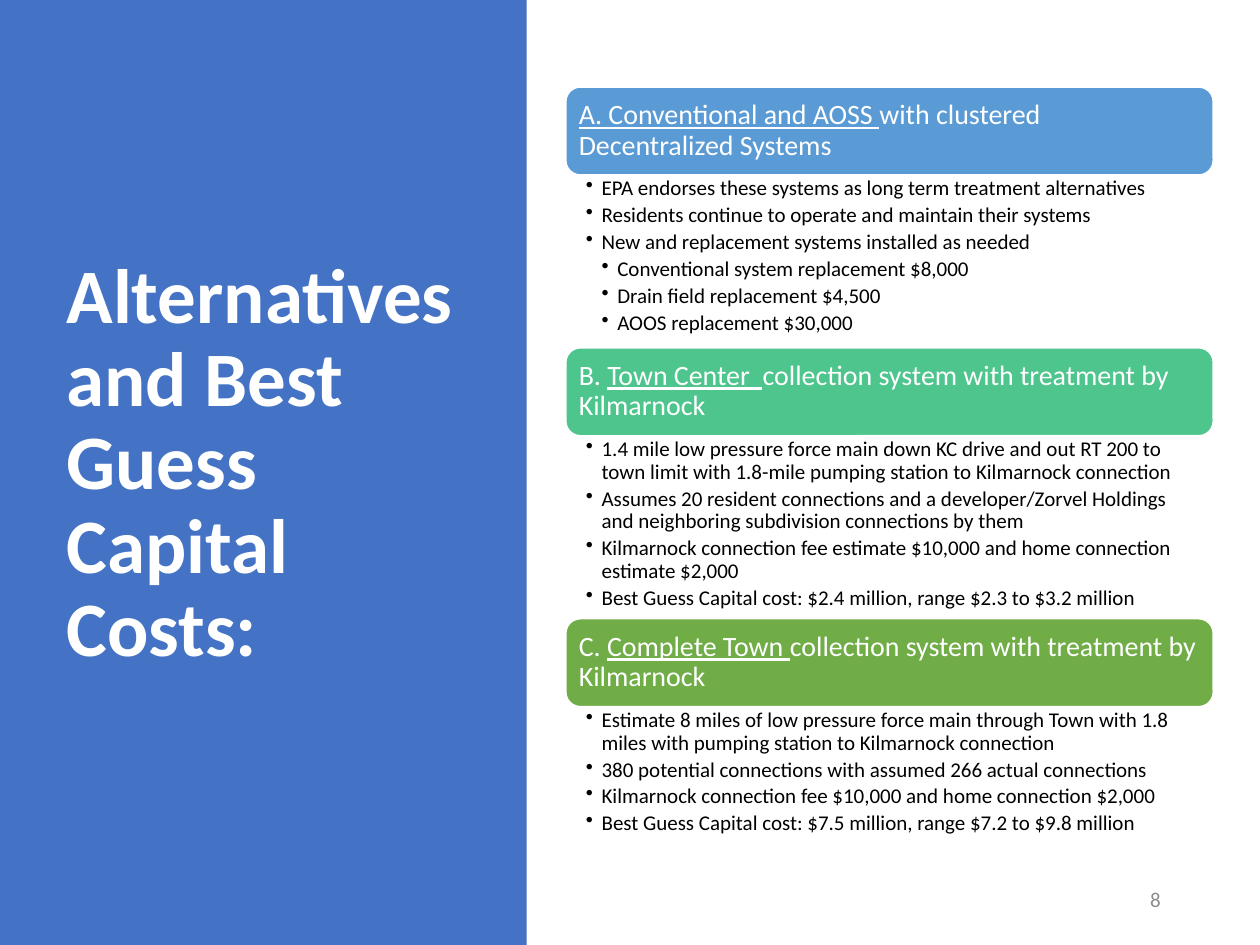
from dataclasses import dataclass

from lxml import etree
from pptx import Presentation
from pptx.dml.color import RGBColor
from pptx.enum.shapes import MSO_SHAPE
from pptx.enum.text import MSO_ANCHOR, PP_ALIGN
from pptx.oxml.ns import qn
from pptx.util import Inches, Pt

RECTANGLE = MSO_SHAPE.RECTANGLE
ROUNDED = MSO_SHAPE.ROUNDED_RECTANGLE
TOP, MIDDLE = MSO_ANCHOR.TOP, MSO_ANCHOR.MIDDLE
LEFT, RIGHT = PP_ALIGN.LEFT, PP_ALIGN.RIGHT


@dataclass(frozen=True)
class Theme:
    font: str = "Calibri"
    panel: str = "4472C4"
    white: str = "FFFFFF"
    black: str = "000000"
    gray: str = "8C8C8C"
    title_size: int = 44
    heading_size: int = 16
    body_size: int = 12
    line_spacing: float = 0.9


THEME = Theme()

# Each heading is a list of (text, underlined); each bullet is (level, text)
ALTERNATIVES = [
    {
        "color": "5B9BD5",
        "body_height": 1.37,
        "heading": [("A. Conventional and AOSS ", True),
                    ("with clustered Decentralized Systems", False)],
        "bullets": [
            (1, "EPA endorses these systems as long term treatment alternatives"),
            (1, "Residents continue to operate and maintain their systems"),
            (1, "New and replacement systems installed as needed"),
            (2, "Conventional system replacement $8,000"),
            (2, "Drain field replacement $4,500"),
            (2, "AOOS replacement $30,000"),
        ],
    },
    {
        "color": "4DC58D",
        "body_height": 1.45,
        "heading": [("B. ", False), ("Town Center  ", True),
                    ("collection system with treatment by Kilmarnock", False)],
        "bullets": [
            (1, "1.4 mile low pressure force main down KC drive and out RT 200 to "
                "town limit with 1.8-mile pumping station to Kilmarnock connection"),
            (1, "Assumes 20 resident connections and a developer/Zorvel Holdings and "
                "neighboring subdivision connections by them"),
            (1, "Kilmarnock connection fee estimate $10,000 and home connection "
                "estimate $2,000"),
            (1, "Best Guess Capital cost: $2.4 million, range $2.3 to $3.2 million"),
        ],
    },
    {
        "color": "70AD47",
        "body_height": 1.09,
        "heading": [("C. ", False), ("Complete Town ", True),
                    ("collection system with treatment by Kilmarnock", False)],
        "bullets": [
            (1, "Estimate 8 miles of low pressure force main through Town with 1.8 "
                "miles with pumping station to Kilmarnock connection"),
            (1, "380 potential connections with assumed 266 actual connections"),
            (1, "Kilmarnock connection fee $10,000 and home connection $2,000"),
            (1, "Best Guess Capital cost: $7.5 million, range $7.2 to $9.8 million"),
        ],
    },
]


def add_block(slide, kind, box, color):
    shape = slide.shapes.add_shape(kind, *map(Inches, box))
    shape.shadow.inherit = False
    shape.fill.solid()
    shape.fill.fore_color.rgb = RGBColor.from_string(color)
    shape.line.fill.background()
    return shape


def set_frame(shape, anchor, insets=(0.1, 0.05, 0.1, 0.05)):
    frame = shape.text_frame
    frame.word_wrap = True
    frame.vertical_anchor = anchor
    (frame.margin_left, frame.margin_top,
     frame.margin_right, frame.margin_bottom) = map(Inches, insets)
    return frame


def style_paragraph(paragraph, size, color, bold=False, align=LEFT):
    paragraph.alignment = align
    paragraph.line_spacing = THEME.line_spacing
    paragraph.font.name = THEME.font
    paragraph.font.size = Pt(size)
    paragraph.font.bold = bold
    paragraph.font.color.rgb = RGBColor.from_string(color)


def set_bullet(paragraph, level):
    paragraph.level = level
    properties = paragraph._p.get_or_add_pPr()
    properties.set("marL", str(Inches(0.125 * level)))
    properties.set("indent", str(Inches(-0.125)))
    bullet = etree.Element(qn("a:buChar"), char="•")
    properties.find(qn("a:defRPr")).addprevious(bullet)


def add_text(slide, box, text, size, color, **style):
    frame = set_frame(slide.shapes.add_textbox(*map(Inches, box)), MIDDLE)
    frame.text = text
    style_paragraph(frame.paragraphs[0], size, color, **style)


def add_title_panel(slide, left, top, width, height):
    add_block(slide, RECTANGLE, (left, top, width, height), THEME.panel)
    add_text(slide, (left + 0.43, top + 0.68, 3.36, 6.02),
             "Alternatives and Best Guess Capital Costs:",
             THEME.title_size, THEME.white, bold=True)


def add_heading(slide, box, alternative):
    shape = add_block(slide, ROUNDED, box, alternative["color"])
    shape.line.color.rgb = RGBColor.from_string(THEME.white)
    shape.line.width = Pt(1)
    paragraph = set_frame(shape, MIDDLE, (0.07,) * 4).paragraphs[0]
    style_paragraph(paragraph, THEME.heading_size, THEME.white)
    for text, underlined in alternative["heading"]:
        run = paragraph.add_run()
        run.text = text
        run.font.underline = underlined


def add_bullets(slide, box, bullets):
    text_box = slide.shapes.add_textbox(*map(Inches, box))
    frame = set_frame(text_box, TOP, (0.16, 0.02, 0.12, 0.02))
    frame.text = "\n".join(text for _, text in bullets)
    for paragraph, (level, _) in zip(frame.paragraphs, bullets):
        style_paragraph(paragraph, THEME.body_size, THEME.black)
        paragraph.space_after = Pt(2.4)
        set_bullet(paragraph, level)


def add_alternatives(slide, left, top, width, heading_height=0.7):
    for alternative in ALTERNATIVES:
        body_height = alternative["body_height"]
        add_heading(slide, (left, top, width, heading_height), alternative)
        top += heading_height
        add_bullets(slide, (left, top, width, body_height), alternative["bullets"])
        top += body_height


def main():
    presentation = Presentation()
    presentation.slide_width = Inches(10)
    presentation.slide_height = Inches(7.5)
    slide = presentation.slides.add_slide(presentation.slide_layouts[6])

    # Title on the left, stacked alternatives on the right
    add_title_panel(slide, 0, 0, 4.18, 7.5)
    add_alternatives(slide, 4.49, 0.69, 5.14)

    # Slide number
    add_text(slide, (7.06, 6.95, 2.25, 0.4), "8",
             THEME.body_size, THEME.gray, align=RIGHT)

    presentation.save("out.pptx")


if __name__ == "__main__":
    main()
